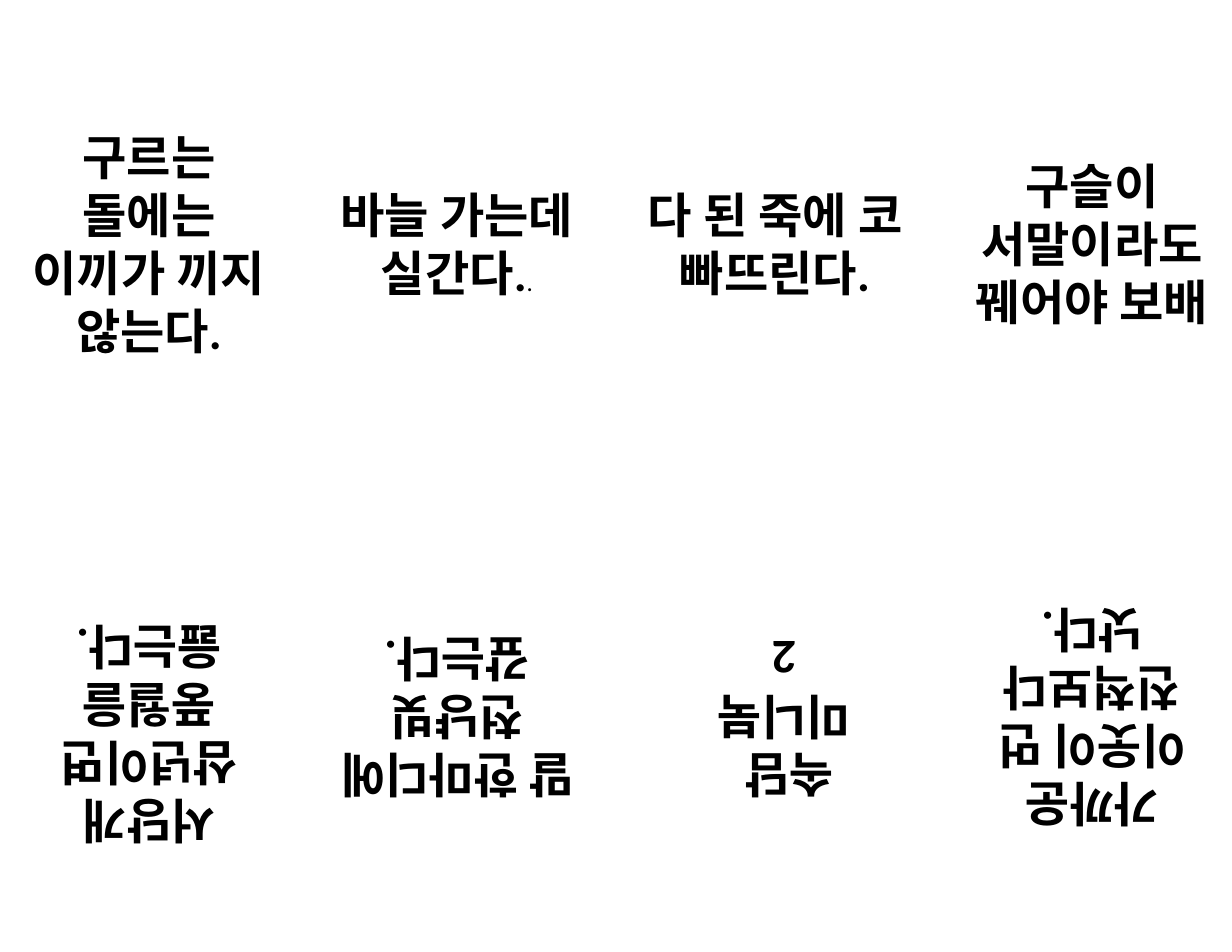
from dataclasses import dataclass

from pptx import Presentation
from pptx.dml.color import RGBColor
from pptx.enum.dml import MSO_LINE
from pptx.enum.shapes import MSO_SHAPE
from pptx.enum.text import MSO_ANCHOR, PP_ALIGN
from pptx.util import Inches, Pt


@dataclass(frozen=True)
class Theme:
    font: str = "Calibri"
    paper: RGBColor = RGBColor(0xFF, 0xFF, 0xFF)
    ink: RGBColor = RGBColor(0, 0, 0)
    body: float = 31
    small: float = 16
    fold: float = 0.25


THEME = Theme()
PAGE_W, PAGE_H = 2.5, 4
TOP_Y, BOTTOM_Y = 0.17, 4.42
PAD_X, PAD_Y = 0.11, 0.06

# Each page: left, paragraphs, small ending, extra space below the text
TOP_PAGES = [
    (0.08, ["구르는 돌에는 이끼가 끼지 않는다."], "", 0),
    (2.83, ["바늘 가는데 실간다."], ".", 0),
    (5.67, ["다 된 죽에 코 빠뜨린다."], "", 0),
    (8.5, ["구슬이 서말이라도 꿰어야 보배"], "", 0),
]
BOTTOM_PAGES = [
    (0.08, ["서당개 삼년이면 풍월을 읊는다."], "", 0.3),
    (2.83, ["말 한마디에 천냥빚 갚는다."], "", 0),
    (5.75, ["속담 ", "미니북", "2"], "", 0),
    (8.5, ["가까운 이웃이 먼 친척보다 낫다."], "", 0),
]


def add_run(p, text, size, bold):
    r = p.add_run()
    r.text = text
    r.font.name = THEME.font
    r.font.size = Pt(size)
    r.font.bold = bold
    r.font.color.rgb = THEME.ink


def add_page(s, x, y, w, h, lines, ending, space_below, rotation):
    """One booklet page, with its proverb centred in the given box."""
    sp = s.shapes.add_shape(MSO_SHAPE.RECTANGLE, Inches(x), Inches(y), Inches(w), Inches(h))
    sp.rotation = rotation
    sp.shadow.inherit = False
    sp.fill.solid()
    sp.fill.fore_color.rgb = THEME.paper
    sp.line.color.rgb = THEME.paper
    sp.line.width = Pt(THEME.fold)
    sp.line.dash_style = MSO_LINE.DASH

    tf = sp.text_frame
    tf.word_wrap = True
    tf.vertical_anchor = MSO_ANCHOR.MIDDLE
    tf.margin_left = tf.margin_right = Inches(PAD_X)
    tf.margin_top = Inches(PAD_Y)
    tf.margin_bottom = Inches(PAD_Y + space_below)
    for i, line in enumerate(lines):
        p = tf.add_paragraph() if i else tf.paragraphs[0]
        p.alignment = PP_ALIGN.CENTER
        add_run(p, line, THEME.body, True)
    if ending:
        add_run(p, ending, THEME.small, False)


def add_row(s, y, pages, rotation):
    """A row of pages, all turned the same way."""
    for x, lines, ending, space_below in pages:
        add_page(s, x, y, PAGE_W, PAGE_H, lines, ending, space_below, rotation)


def main():
    prs = Presentation()
    prs.slide_width, prs.slide_height = Inches(11), Inches(8.5)
    s = prs.slides.add_slide(prs.slide_layouts[6])
    # Upright row, then the row that is upside down until folded
    add_row(s, TOP_Y, TOP_PAGES, 0)
    add_row(s, BOTTOM_Y, BOTTOM_PAGES, 180)
    prs.save("out.pptx")


if __name__ == "__main__":
    main()
